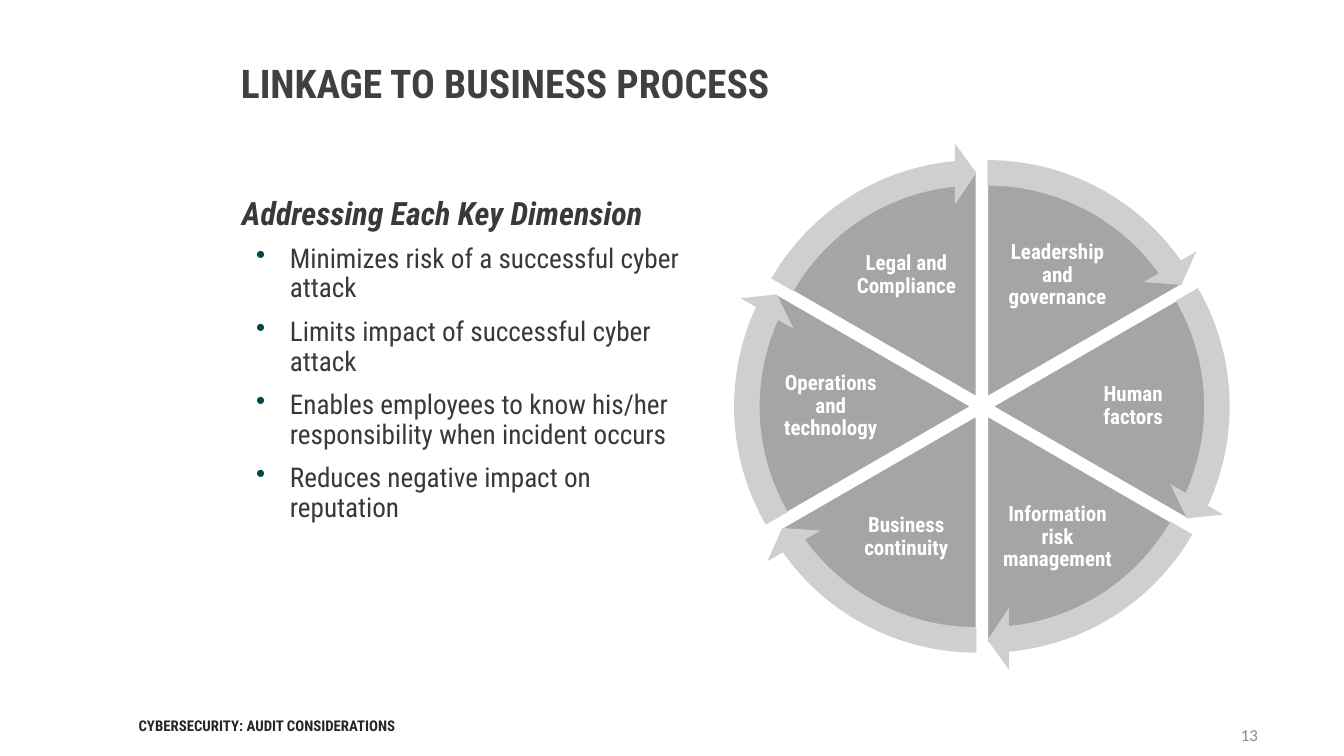
import math

import pptx
import pptx.util
import pptx.dml.color
import pptx.enum.shapes
import pptx.enum.text
import pptx.oxml
import pptx.oxml.ns

RGB = pptx.dml.color.RGBColor
Pt = pptx.util.Pt
SHAPE = pptx.enum.shapes.MSO_SHAPE
ALIGN = pptx.enum.text.PP_ALIGN
MIDDLE = pptx.enum.text.MSO_ANCHOR.MIDDLE

WHITE = RGB(0xFF, 0xFF, 0xFF)
WEDGE = RGB(0xA5, 0xA5, 0xA5)
RING = RGB(0xCF, 0xCF, 0xCF)
TITLE = RGB(0x40, 0x40, 0x40)
BODY = RGB(0x3B, 0x38, 0x38)
FOOT = RGB(0x26, 0x26, 0x26)
PAGE = RGB(0x8C, 0x8C, 0x8C)
TEAL = RGB(0x02, 0x4A, 0x4A)

WIDE = pptx.util.Inches(15.11)
HIGH = pptx.util.Inches(8.5)
HUB = (73.06, 53.76)
TURN = 216
STEP = TURN / 6
HEAD = 3.28

PARTS = ["Leadership and governance", "Human factors", "Information risk management",
         "Business continuity", "Operations and technology", "Legal and Compliance"]
POINTS = ["Minimizes risk of a successful cyber attack",
          "Limits impact of successful cyber attack",
          "Enables employees to know his/her responsibility when incident occurs",
          "Reduces negative impact on reputation"]


def col(share):
    return round(WIDE * share / 100)


def row(share):
    return round(HIGH * share / 100)


def apply(target, values):
    for name, value in values.items():
        setattr(target, name, value)


def add_text(slide, place, frame=None):
    left, top, width, height = place
    box = slide.shapes.add_textbox(col(left), row(top), col(width), row(height))
    apply(box.text_frame, {"word_wrap": True, **(frame or {})})
    return box.text_frame


def inset(size):
    return {"margin_" + side: pptx.util.Inches(size)
            for side in ("left", "top", "right", "bottom")}


def write(para, text, color, font, form=None):
    apply(para, form or {})
    run = para.add_run()
    run.text = text
    apply(run.font, {"name": "Roboto Condensed", **font})
    run.font.color.rgb = color


def indent(para, left, hang=0):
    props = para._p.get_or_add_pPr()
    props.set("marL", str(pptx.util.Inches(left)))
    props.set("indent", str(pptx.util.Inches(hang)))
    return props


def add_mark(para):
    props = indent(para, 0.65, -0.38)
    space = pptx.oxml.ns.nsdecls("a")
    for xml in (f'<a:buClr {space}><a:srgbClr val="{TEAL}"/></a:buClr>',
                f'<a:buChar {space} char="•"/>'):
        props.append(pptx.oxml.parse_xml(xml))


def polar(angle, reach):
    theta = math.radians(angle * 360 / TURN)
    return (col(HUB[0]) + round(col(reach) * math.cos(theta)),
            row(HUB[1]) + round(col(reach) * math.sin(theta)))


def add_round(slide, kind, angle, size, fill, tweaks):
    x, y = polar(angle, 0.83)
    side = col(size)
    shape = slide.shapes.add_shape(kind, x - side // 2, y - side // 2, side, side)
    shape.shadow.inherit = False
    shape.fill.solid()
    shape.fill.fore_color.rgb = fill
    for spot, value in enumerate(tweaks):
        shape.adjustments[spot] = value
    return shape


def add_wedge(slide, start, label):
    angle = start + STEP / 2
    pie = add_round(slide, SHAPE.PIE, angle, 33.69, WEDGE, (start, (start + STEP) % TURN))
    pie.line.color.rgb = WHITE
    pie.line.width = Pt(1)
    x, y = polar(angle, 11.25)
    width, height = 8.93, 11.76
    place = (x / WIDE * 100 - width / 2, y / HIGH * 100 - height / 2, width, height)
    frame = add_text(slide, place, {"vertical_anchor": MIDDLE, **inset(0.02)})
    write(frame.paragraphs[0], label, WHITE, {"size": Pt(17), "bold": True},
          {"alignment": ALIGN.CENTER, "line_spacing": 0.9})


def add_arrow(slide, start):
    stop = (start + STEP - HEAD) % TURN
    arrow = add_round(slide, SHAPE.CIRCULAR_ARROW, start + STEP / 2, 37.86, RING,
                      (0.05, HEAD, stop, start, 0.06))
    arrow.line.fill.background()


def add_wheel(slide):
    starts = [(162 + STEP * turn) % TURN for turn in range(len(PARTS))]
    for start, label in zip(starts, PARTS):
        add_wedge(slide, start, label)
    for start in starts:
        add_arrow(slide, start)


def add_points(slide):
    frame = add_text(slide, (17.27, 26.94, 34.48, 66.71), inset(0))
    lead = frame.paragraphs[0]
    indent(lead, 0.11)
    write(lead, "Addressing Each Key Dimension", BODY,
          {"size": Pt(26), "bold": True, "italic": True},
          {"line_spacing": 0.7, "space_after": Pt(6)})
    for point in POINTS:
        para = frame.add_paragraph()
        add_mark(para)
        write(para, point, BODY, {"size": Pt(22)},
              {"line_spacing": 0.9, "space_before": Pt(5.7), "space_after": Pt(6)})


def main():
    deck = pptx.Presentation()
    apply(deck, {"slide_width": WIDE, "slide_height": HIGH})
    slide = deck.slides.add_slide(deck.slide_layouts[6])
    foot = add_text(slide, (9.66, 93.29, 22.5, 5.29), {"vertical_anchor": MIDDLE})
    write(foot.paragraphs[0], "CYBERSECURITY: AUDIT CONSIDERATIONS", FOOT,
          {"size": Pt(12), "bold": True})
    page = add_text(slide, (71.74, 94.59, 22.5, 5.29), {"vertical_anchor": MIDDLE})
    write(page.paragraphs[0], "13", PAGE, {"name": "Calibri", "size": Pt(13.6)},
          {"alignment": ALIGN.RIGHT})
    title = add_text(slide, (17.27, 7.18, 73.73, 7.53))
    write(title.paragraphs[0], "LINKAGE TO BUSINESS PROCESS", TITLE,
          {"size": Pt(32), "bold": True})
    add_wheel(slide)
    add_points(slide)
    deck.save("out.pptx")


if __name__ == "__main__":
    main()
